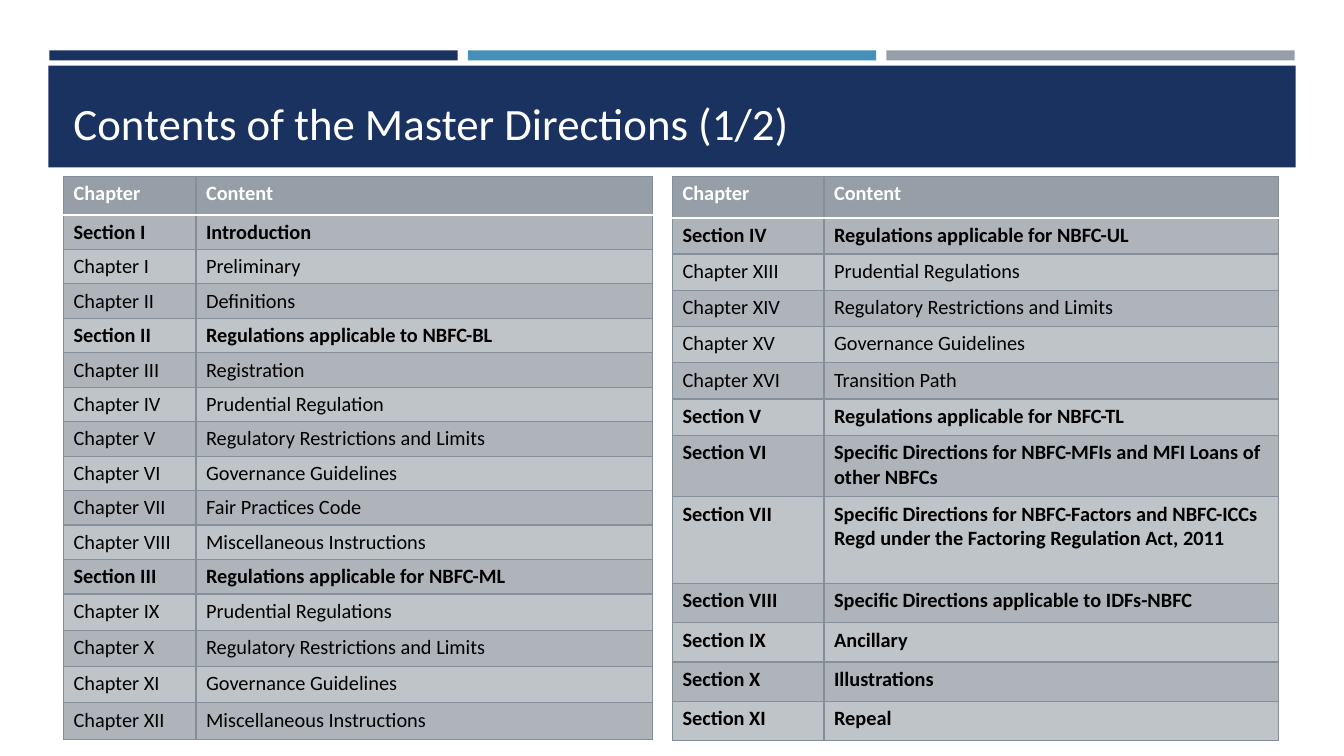
from lxml.etree import SubElement
from pptx import Presentation
from pptx.dml.color import RGBColor
from pptx.enum.shapes import MSO_SHAPE
from pptx.enum.text import MSO_ANCHOR
from pptx.oxml.ns import qn
from pptx.util import Inches, Pt

NAVY = RGBColor(0x1A, 0x32, 0x60)
BLUE = RGBColor(0x45, 0x90, 0xB8)
GREY = RGBColor(0x96, 0x9F, 0xA7)
DARK_BAND = RGBColor(0xAF, 0xB4, 0xBB)
LIGHT_BAND = RGBColor(0xBF, 0xC4, 0xC8)
RULE = RGBColor(0x85, 0x8F, 0x99)
WHITE = RGBColor(0xFF, 0xFF, 0xFF)
BLACK = RGBColor(0, 0, 0)

TITLE_FORMAT = {"name": "Calibri", "size": Pt(32)}
CELL_FORMAT = {"name": "Calibri", "size": Pt(14.5)}
HEADER = ("Chapter", "Content")

FIRST_CONTENTS = [
    ("Section I", "Introduction"),
    ("Chapter I", "Preliminary"),
    ("Chapter II", "Definitions"),
    ("Section II", "Regulations applicable to NBFC-BL"),
    ("Chapter III", "Registration"),
    ("Chapter IV", "Prudential Regulation"),
    ("Chapter V", "Regulatory Restrictions and Limits"),
    ("Chapter VI", "Governance Guidelines"),
    ("Chapter VII", "Fair Practices Code"),
    ("Chapter VIII", "Miscellaneous Instructions"),
    ("Section III", "Regulations applicable for NBFC-ML"),
    ("Chapter IX", "Prudential Regulations"),
    ("Chapter X", "Regulatory Restrictions and Limits"),
    ("Chapter XI", "Governance Guidelines"),
    ("Chapter XII", "Miscellaneous Instructions"),
]
FIRST_HEIGHTS = [0.38] + [0.32] * 11 + [0.36] * 4

SECOND_CONTENTS = [
    ("Section IV", "Regulations applicable for NBFC-UL"),
    ("Chapter XIII", "Prudential Regulations"),
    ("Chapter XIV", "Regulatory Restrictions and Limits"),
    ("Chapter XV", "Governance Guidelines"),
    ("Chapter XVI", "Transition Path"),
    ("Section V", "Regulations applicable for NBFC-TL"),
    ("Section VI", "Specific Directions for NBFC-MFIs and MFI Loans of other NBFCs"),
    ("Section VII", "Specific Directions for NBFC-Factors and NBFC-ICCs "
                    "Regd under the Factoring Regulation Act, 2011"),
    ("Section VIII", "Specific Directions applicable to IDFs-NBFC"),
    ("Section IX", "Ancillary"),
    ("Section X", "Illustrations"),
    ("Section XI", "Repeal"),
]
SECOND_HEIGHTS = [0.41] + [0.36] * 6 + [0.61, 0.86] + [0.39] * 4


def apply_format(font, values, color):
    """Set font attributes and colour."""
    for attribute, value in values.items():
        setattr(font, attribute, value)
    font.color.rgb = color


def add_bar(slide, box, color):
    """Draw one plain filled rectangle in the box."""
    bar = slide.shapes.add_shape(MSO_SHAPE.RECTANGLE, *map(Inches, box))
    bar.shadow.inherit = False
    bar.fill.solid()
    bar.fill.fore_color.rgb = color
    bar.line.fill.background()


def add_accents(slide, box, gap):
    """Divide the box into three equal accent bars."""
    left, top, width, height = box
    bar_width = (width - 2 * gap) / 3
    for index, color in enumerate((NAVY, BLUE, GREY)):
        add_bar(slide, (left + index * (bar_width + gap), top, bar_width, height), color)


def add_banner(slide, box, title):
    """Draw the title banner with its heading in the box."""
    left, top, width, height = box
    add_bar(slide, box, NAVY)
    heading = slide.shapes.add_textbox(
        Inches(left + 0.15), Inches(top), Inches(width - 0.3), Inches(height - 0.13))
    frame = heading.text_frame
    frame.word_wrap = True
    frame.vertical_anchor = MSO_ANCHOR.BOTTOM
    run = frame.paragraphs[0].add_run()
    run.text = title
    apply_format(run.font, TITLE_FORMAT, WHITE)


def set_borders(cell, row):
    """Rule a cell on four sides, with a white line under the header."""
    properties = cell._tc.get_or_add_tcPr()
    white_side = {0: "B", 1: "T"}.get(row)
    for position, side in enumerate("LRTB"):
        white = side == white_side
        line = SubElement(properties, qn(f"a:ln{side}"), w=str(Pt(1.75 if white else 1)))
        fill = SubElement(line, qn("a:solidFill"))
        SubElement(fill, qn("a:srgbClr"), val=str(WHITE if white else RULE))
        properties.insert(position, line)


def fill_cell(cell, text, row, bold):
    """Write and colour one cell according to its row."""
    cell.fill.solid()
    cell.fill.fore_color.rgb = GREY if row == 0 else DARK_BAND if row % 2 else LIGHT_BAND
    run = cell.text_frame.paragraphs[0].add_run()
    run.text = text
    run.font.bold = bold
    apply_format(run.font, CELL_FORMAT, BLACK if row else WHITE)
    set_borders(cell, row)


def add_contents(slide, box, contents, heights, chapter_share):
    """Build a contents table in the box, with section rows in bold."""
    rows = [HEADER, *contents]
    table = slide.shapes.add_table(len(rows), len(HEADER), *map(Inches, box)).table
    table.horz_banding = False
    for column, share in zip(table.columns, (chapter_share, 1 - chapter_share)):
        column.width = Inches(box[2] * share)
    for row, (texts, height) in enumerate(zip(rows, heights)):
        table.rows[row].height = Inches(height)
        bold = row == 0 or texts[0].startswith("Section")
        for column, text in enumerate(texts):
            fill_cell(table.cell(row, column), text, row, bold)


def main():
    """Build and save the contents slide."""
    deck = Presentation()
    deck.slide_width, deck.slide_height = Inches(13.33), Inches(7.5)
    slide = deck.slides.add_slide(deck.slide_layouts[6])
    add_accents(slide, (0.49, 0.5, 12.35, 0.1), 0.1)
    add_banner(slide, (0.48, 0.65, 12.37, 1.01), "Contents of the Master Directions (1/2)")
    add_contents(slide, (6.67, 1.75, 6.01, 5.59), SECOND_CONTENTS, SECOND_HEIGHTS, 0.25)
    add_contents(slide, (0.63, 1.75, 5.84, 5.59), FIRST_CONTENTS, FIRST_HEIGHTS, 0.225)
    deck.save("out.pptx")


if __name__ == "__main__":
    main()
